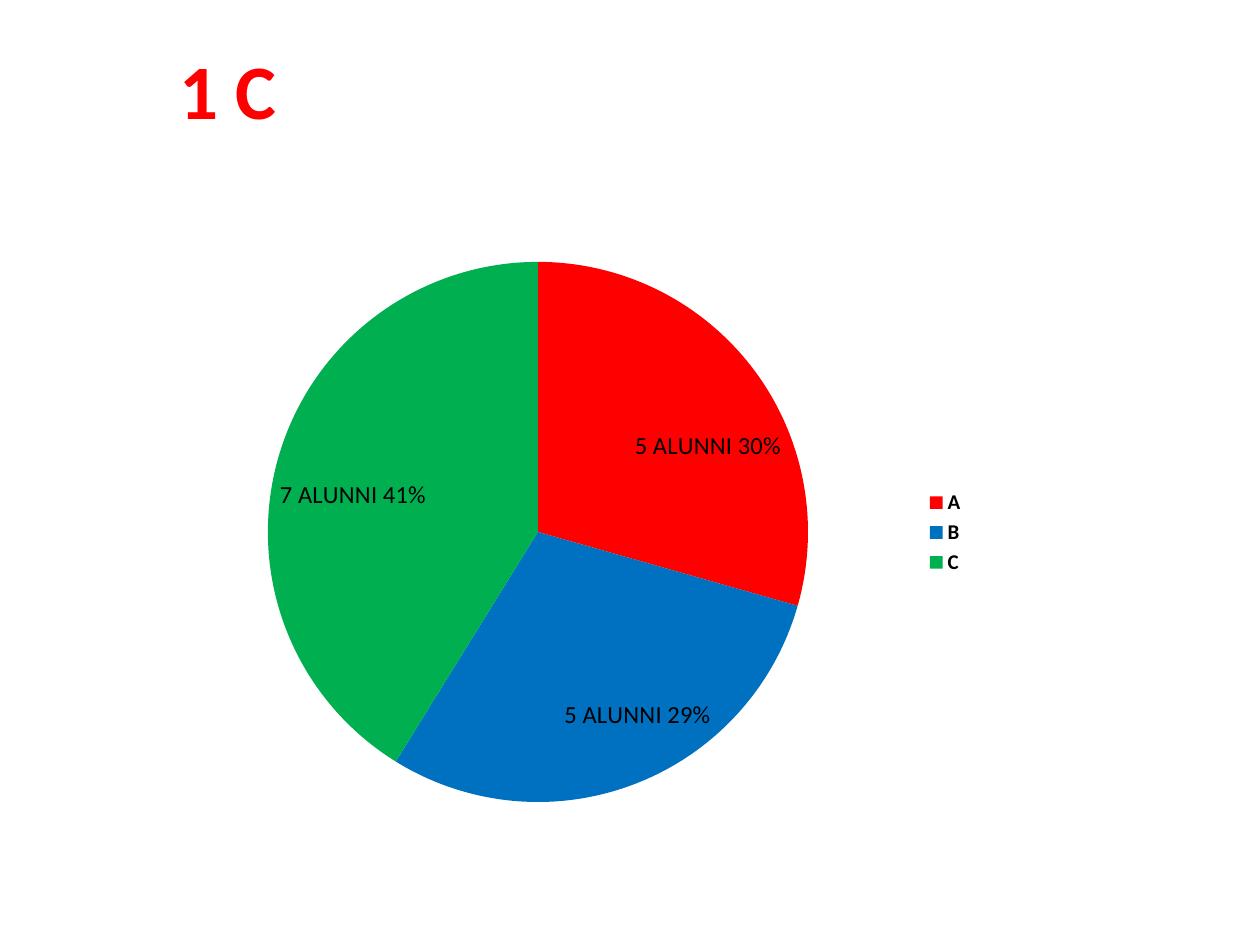
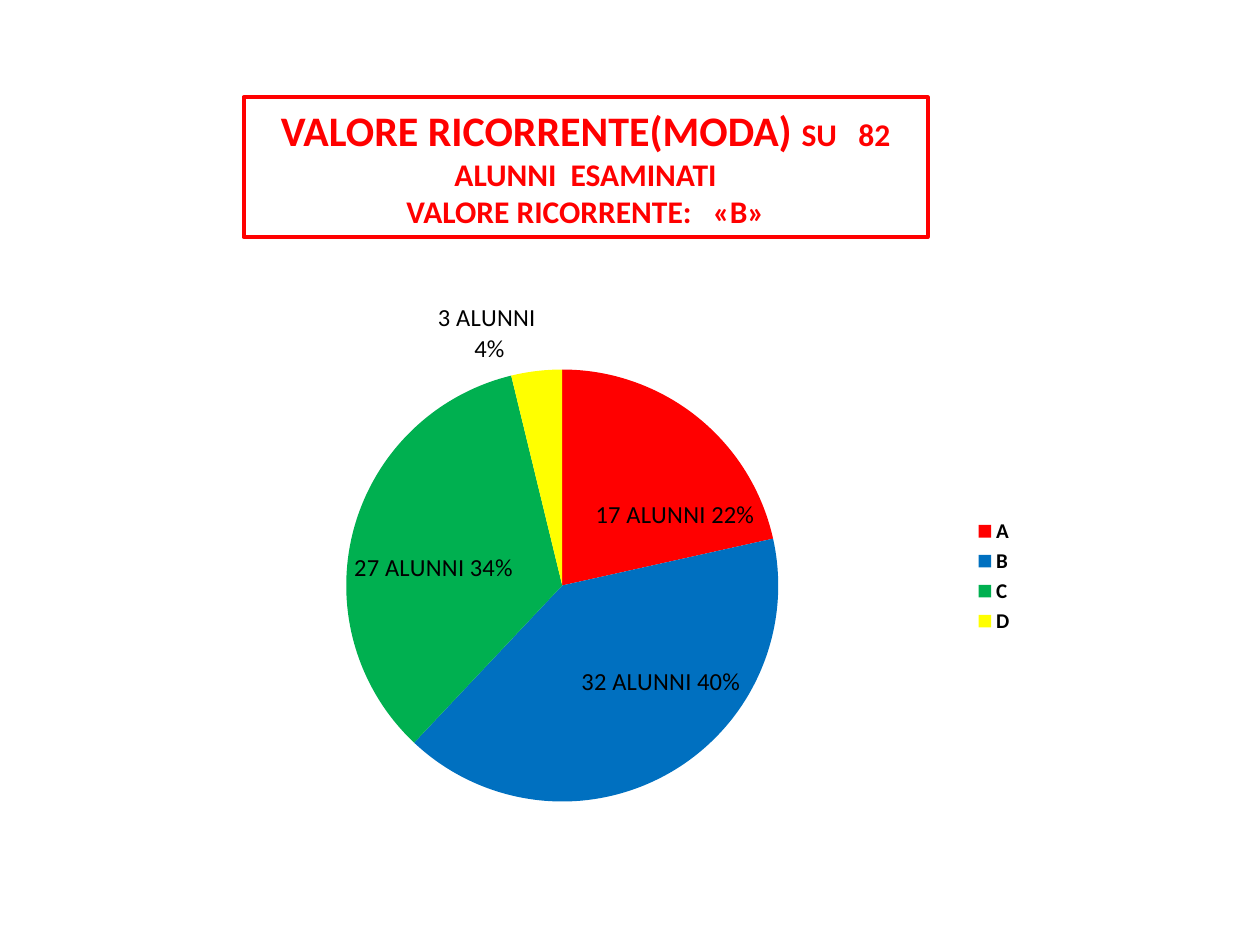
"""Build two slides that show pupils' grades as pie charts."""
from lxml import etree
from pptx import Presentation
from pptx.chart.data import CategoryChartData
from pptx.dml.color import RGBColor
from pptx.enum.chart import XL_CHART_TYPE, XL_LABEL_POSITION, XL_LEGEND_POSITION
from pptx.enum.text import MSO_ANCHOR, MSO_AUTO_SIZE, PP_ALIGN
from pptx.oxml import parse_xml
from pptx.oxml.ns import nsdecls, qn
from pptx.util import Cm, Pt

FONT = "Calibri"
RED = "FF0000"
BLACK = "000000"
GRADE_COLOURS = {"A": RED, "B": "0070C0", "C": "00B050", "D": "FFFF00"}


def colour(code):
    return RGBColor.from_string(code)


def write(para, text, size=14, code=BLACK, bold=False):
    span = para.add_run()
    span.text = text
    span.font.name = FONT
    span.font.size = Pt(size)
    span.font.bold = bold
    span.font.color.rgb = colour(code)


slides = [
    {
        "title": [[("1 C", 44)]],
        "title_box": (2.1, 0.73, 5, 2.13),
        "outlined": False,
        "chart_box": (3.1, 4.93, 16.61, 11.61),
        "pie_box": (5.4, 5.28, 10.89),
        "pupils": [5, 5, 7],
        "labels": ["5 ALUNNI 30%", "5 ALUNNI 29%", "7 ALUNNI 41%"],
    },
    {
        "title": [
            [("VALORE RICORRENTE(MODA) ", 24), ("SU   82 ALUNNI  ESAMINATI", 18)],
            [("VALORE RICORRENTE:   «B»", 18)],
        ],
        "title_box": (4.91, 1.96, 13.79, 2.82),
        "outlined": True,
        "chart_box": (4.09, 5.71, 16.61, 11.81),
        "pie_box": (6.98, 7.45, 8.71),
        "pupils": [17, 32, 27, 3],
        "labels": ["17 ALUNNI 22%", "32 ALUNNI 40%", "27 ALUNNI 34%", "3 ALUNNI\n 4%"],
    },
]

deck = Presentation()
deck.slide_width = Cm(25.4)
deck.slide_height = Cm(19.05)

for content in slides:
    page = deck.slides.add_slide(deck.slide_layouts[5])

    title = page.shapes.title
    title.left, title.top, title.width, title.height = map(Cm, content["title_box"])
    if content["outlined"]:
        title.line.color.rgb = colour(RED)
        title.line.width = Pt(2.25)
    frame = title.text_frame
    frame.word_wrap = True
    frame.auto_size = MSO_AUTO_SIZE.NONE
    frame.vertical_anchor = MSO_ANCHOR.MIDDLE
    for index, spans in enumerate(content["title"]):
        para = frame.add_paragraph() if index else frame.paragraphs[0]
        para.alignment = PP_ALIGN.CENTER
        for text, size in spans:
            write(para, text, size=size, code=RED, bold=True)

    grades = list(GRADE_COLOURS)[:len(content["pupils"])]
    data = CategoryChartData()
    data.categories = grades
    data.add_series("Series 1", content["pupils"])
    chart = page.shapes.add_chart(
        XL_CHART_TYPE.PIE, *map(Cm, content["chart_box"]), data
    ).chart
    chart.has_title = False
    chart.font.name = FONT
    chart.font.size = Pt(10)
    chart.font.color.rgb = colour(BLACK)
    chart.has_legend = True
    chart.legend.position = XL_LEGEND_POSITION.RIGHT
    chart.legend.include_in_layout = False
    chart.legend.font.size = Pt(12)
    chart.legend.font.bold = True

    plot_area = chart.element.find(".//" + qn("c:plotArea"))
    for old_layout in plot_area.findall(qn("c:layout")):
        plot_area.remove(old_layout)
    layout = parse_xml(f"<c:layout {nsdecls('c')}/>")
    manual = etree.SubElement(layout, qn("c:manualLayout"))
    left, top, width, height = content["chart_box"]
    pie_left, pie_top, diameter = content["pie_box"]
    settings = {
        "layoutTarget": "inner",
        "xMode": "edge",
        "yMode": "edge",
        "x": (pie_left - left) / width,
        "y": (pie_top - top) / height,
        "w": diameter / width,
        "h": diameter / height,
    }
    for name, value in settings.items():
        etree.SubElement(manual, qn(f"c:{name}")).set("val", str(value))
    plot_area.insert(0, layout)

    plot = chart.plots[0]
    plot.vary_by_categories = True
    series = plot.series[0]
    series_labels = series.data_labels
    series_labels.show_value = True
    series_labels.show_percentage = True
    series_labels.font.size = Pt(14)
    series_labels.font.bold = True
    for index, (grade, label) in enumerate(zip(grades, content["labels"])):
        point = series.points[index]
        point.format.fill.solid()
        point.format.fill.fore_color.rgb = colour(GRADE_COLOURS[grade])
        frame = point.data_label.text_frame
        for number, text in enumerate(label.split("\n")):
            para = frame.add_paragraph() if number else frame.paragraphs[0]
            write(para, text)
        point.data_label.position = XL_LABEL_POSITION.BEST_FIT
    for flag in chart.element.iter(qn("c:showPercent")):
        flag.set("val", "1")

deck.save("out.pptx")
